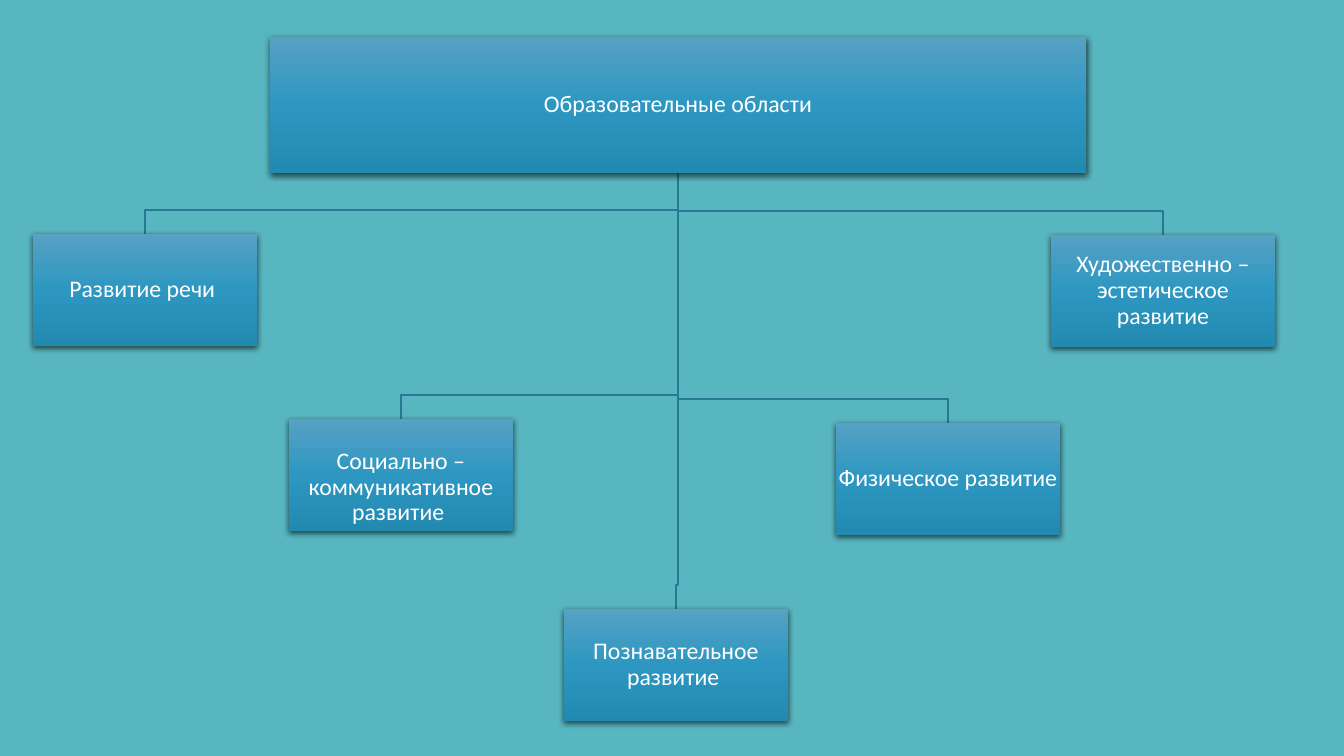
from copy import deepcopy
from dataclasses import dataclass

from lxml import etree
from pptx import Presentation
from pptx.dml.color import RGBColor
from pptx.enum.shapes import MSO_SHAPE
from pptx.enum.text import MSO_ANCHOR, PP_ALIGN
from pptx.oxml.ns import qn
from pptx.util import Emu, Pt

RECT = MSO_SHAPE.RECTANGLE
MIDDLE = MSO_ANCHOR.MIDDLE
CENTER = PP_ALIGN.CENTER

WIDE, HIGH = 1344, 756
PX = 12192000 / WIDE
BOX_W, BOX_H = 224, 112
DROP = 24  # last vertical piece of each branch
PAD = 1


@dataclass(frozen=True)
class Theme:
    back: str = "58B6C0"
    line: str = "2A7795"
    text: str = "FFFFFF"
    shade: str = "000000"
    stops: tuple = ("56A1C4", "2D97C1", "2289B1")
    font: str = "Calibri"
    size: int = 17


THEME = Theme()

ROOT = ("Образовательные области", 270, 37, 816, 136)

# label, left, top, extra space above the text
AREAS = [
    ("Художественно – эстетическое развитие", 1051, 235, 0),
    ("Физическое развитие ", 836, 423, 0),
    ("Познавательное развитие ", 564, 609, 0),
    ("Социально – коммуникативное развитие ", 289, 419, 25),
    ("Развитие речи ", 33, 234, 0),
]


def px(num):
    return Emu(round(num * PX))


def rgb(code):
    return RGBColor.from_string(code)


def paint(shape):
    """Three-stop vertical gradient."""
    fill = shape.fill
    fill.gradient()
    fill.gradient_angle = 270
    group = shape._element.spPr.find(qn("a:gradFill")).find(qn("a:gsLst"))
    mid = deepcopy(group[0])
    mid.set("pos", "50000")
    group.insert(1, mid)
    for stop, code in zip(fill.gradient_stops, THEME.stops):
        stop.color.rgb = rgb(code)


def shade(shape):
    """Soft shadow below the box."""
    shape.shadow.inherit = False
    effects = shape._element.spPr.find(qn("a:effectLst"))
    outer = etree.SubElement(
        effects, qn("a:outerShdw"), blurRad=str(Pt(4.5)), dist=str(Pt(1.5)),
        dir="5400000", algn="ctr", rotWithShape="0")
    color = etree.SubElement(outer, qn("a:srgbClr"), val=THEME.shade)
    etree.SubElement(color, qn("a:alpha"), val="63000")


def add_box(slide, label, left, top, width, height, gap=0):
    box = slide.shapes.add_shape(RECT, px(left), px(top), px(width), px(height))
    paint(box)
    box.line.fill.background()
    shade(box)

    frame = box.text_frame
    frame.word_wrap = True
    frame.vertical_anchor = MIDDLE
    frame.margin_left = frame.margin_right = frame.margin_bottom = px(PAD)
    frame.margin_top = px(PAD + gap)
    para = frame.paragraphs[0]
    para.alignment = CENTER
    para.line_spacing = 0.9
    run = para.add_run()
    run.text = label
    run.font.name = THEME.font
    run.font.size = Pt(THEME.size)
    run.font.color.rgb = rgb(THEME.text)


def add_branch(slide, start, end):
    """Down, across and down from the root to one area."""
    (x, y), (to_x, to_y) = start, end
    bend = to_y - DROP
    draft = slide.shapes.build_freeform(x, y, scale=PX)
    draft.add_line_segments([(x, bend), (to_x, bend), end], close=False)
    branch = draft.convert_to_shape()
    branch.fill.background()
    branch.line.color.rgb = rgb(THEME.line)
    branch.line.width = Pt(1)
    branch.shadow.inherit = False


def main():
    deck = Presentation()
    deck.slide_width, deck.slide_height = px(WIDE), px(HIGH)
    slide = deck.slides.add_slide(deck.slide_layouts[6])
    back = slide.background.fill
    back.solid()
    back.fore_color.rgb = rgb(THEME.back)

    # Branches lie behind the boxes
    _, left, top, width, height = ROOT
    start = (left + width // 2, top + height)
    for _, left, top, _ in AREAS:
        add_branch(slide, start, (left + BOX_W // 2, top))

    # Root and areas
    add_box(slide, *ROOT)
    for label, left, top, gap in reversed(AREAS):
        add_box(slide, label, left, top, BOX_W, BOX_H, gap)

    deck.save("out.pptx")


if __name__ == "__main__":
    main()
